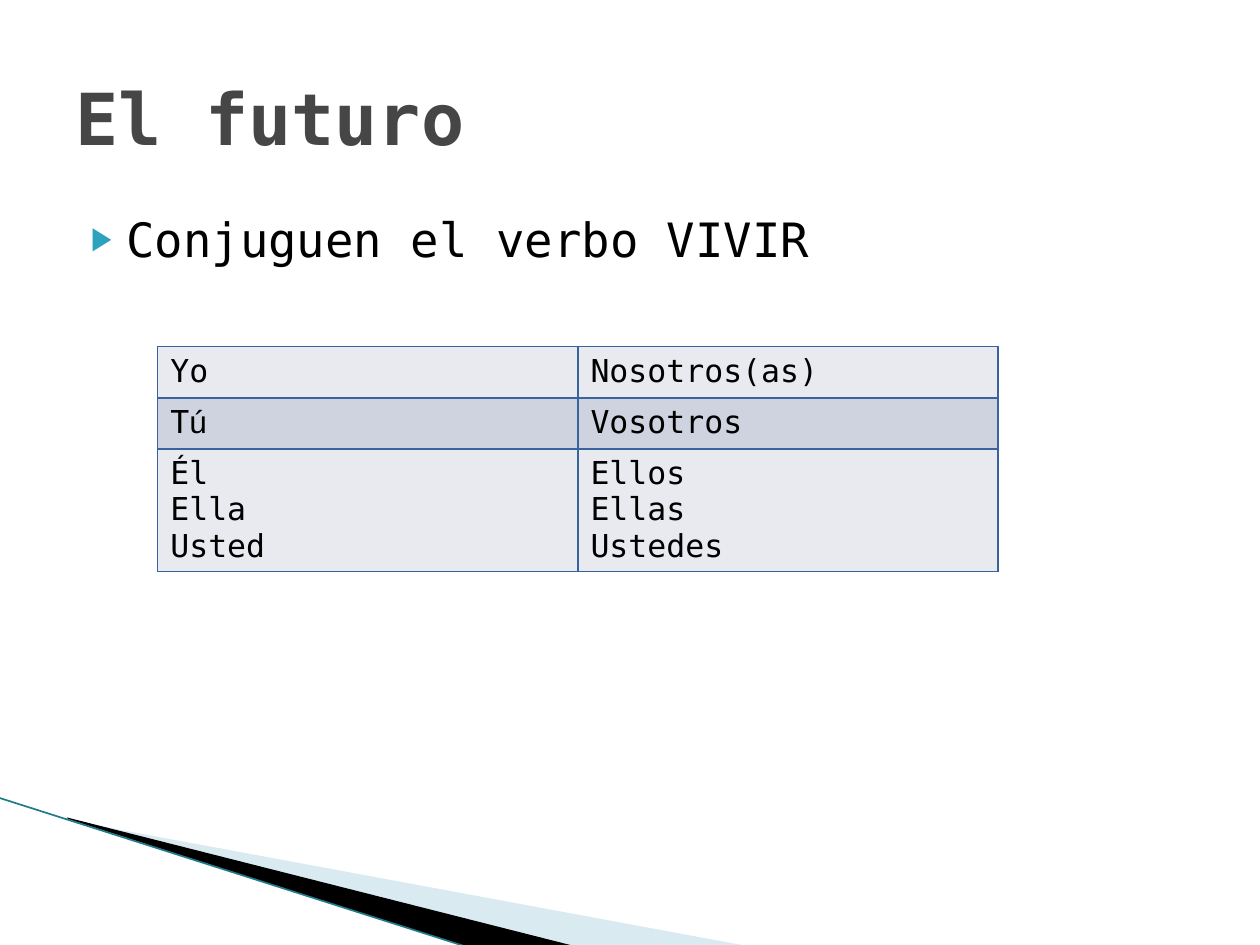
from lxml.etree import SubElement
from pptx import Presentation
from pptx.dml.color import RGBColor
from pptx.enum.shapes import MSO_CONNECTOR
from pptx.enum.text import MSO_ANCHOR, PP_ALIGN
from pptx.oxml import parse_xml
from pptx.oxml.ns import nsdecls, qn
from pptx.util import Cm, Pt

MONO = "DejaVu Sans Mono"


def rgb(hex_colour):
    return RGBColor.from_string(hex_colour)


def write(paragraph, text, size=18, colour="000000", bold=False, font=MONO):
    run = paragraph.add_run()
    run.text = text
    run.font.size = Pt(size)
    run.font.name = font
    run.font.bold = bold
    run.font.color.rgb = rgb(colour)


prs = Presentation()
prs.slide_width, prs.slide_height = Cm(25.4), Cm(19.05)
slide = prs.slides.add_slide(prs.slide_layouts[1])
title, body = slide.placeholders

# Corner decoration: two wedges and a thin edge line
wedges = [
    ([(1.4, 16.54), (15.11, 19.08), (11.58, 19.08), (1.4, 16.51)], "A0CBDC", 40),
    ([(1.35, 16.48), (11.61, 19.08), (9.45, 19.1), (1.37, 16.51)], "000000", 100),
]
for points, colour, opacity in wedges:
    start, *others = [(Cm(x), Cm(y)) for x, y in points]
    builder = slide.shapes.build_freeform(*start)
    builder.add_line_segments(others, close=True)
    wedge = builder.convert_to_shape()
    wedge.shadow.inherit = False
    wedge.fill.solid()
    wedge.fill.fore_color.rgb = rgb(colour)
    wedge.line.fill.background()
    if opacity < 100:
        fill_colour = wedge.element.spPr.find(qn("a:solidFill"))[0]
        SubElement(fill_colour, qn("a:alpha"), val=str(opacity * 1000))

edge = slide.shapes.add_connector(
    MSO_CONNECTOR.STRAIGHT, Cm(-0.03), Cm(16.08), Cm(9.45), Cm(19.1))
edge.line.color.rgb = rgb("1F7A8C")
edge.line.width = Pt(0.95)
SubElement(edge.element.spPr, qn("a:effectLst"))

# Title
title.left, title.top, title.width, title.height = Cm(1.27), Cm(0.76), Cm(22.86), Cm(3.18)
title.text_frame.vertical_anchor = MSO_ANCHOR.MIDDLE
heading = title.text_frame.paragraphs[0]
heading.alignment = PP_ALIGN.LEFT
write(heading, "El futuro", size=41, colour="464646", bold=True)

# Instruction with its triangular bullet
body.left, body.top, body.width, body.height = Cm(1.27), Cm(4.11), Cm(22.86), Cm(12.57)
instruction = body.text_frame.paragraphs[0]
bullet = instruction._p.get_or_add_pPr()
bullet.set("marL", str(Cm(1.02)))
bullet.set("indent", str(Cm(-0.71)))
SubElement(SubElement(bullet, qn("a:buClr")), qn("a:srgbClr"), val="2DA2BF")
SubElement(bullet, qn("a:buSzPct"), val="68000")
SubElement(bullet, qn("a:buChar"), char="▶")
instruction.space_before = Pt(0)
write(instruction, "Conjuguen el verbo VIVIR", size=27)

# Pronoun table: one list of lines per cell
pronouns = [
    (["Yo"], ["Nosotros(as)"]),
    (["Tú"], ["Vosotros"]),
    (["Él", "Ella", "Usted"], ["Ellos", "Ellas", "Ustedes"]),
]
row_heights = [1.03, 1.03, 2.47]
band_fills = ["E8EAEF", "CED3DF", "E8EAEF"]
table = slide.shapes.add_table(
    3, 2, Cm(3.18), Cm(6.99), Cm(16.94), Cm(sum(row_heights))).table
table.first_row = False
table.horz_banding = False
for row, height, band, cells in zip(table.rows, row_heights, band_fills, pronouns):
    row.height = Cm(height)
    for cell, lines in zip(row.cells, cells):
        for side in ("lnL", "lnR", "lnT", "lnB"):
            cell._tc.get_or_add_tcPr().append(parse_xml(
                f'<a:{side} {nsdecls("a")} w="12700"><a:solidFill>'
                f'<a:srgbClr val="39639D"/></a:solidFill></a:{side}>'))
        cell.fill.solid()
        cell.fill.fore_color.rgb = rgb(band)
        for number, line in enumerate(lines):
            frame = cell.text_frame
            paragraph = frame.add_paragraph() if number else frame.paragraphs[0]
            if line == "Tú":
                write(paragraph, "T")
                write(paragraph, "ú", font="Arial")
            else:
                write(paragraph, line)

prs.save("out.pptx")
